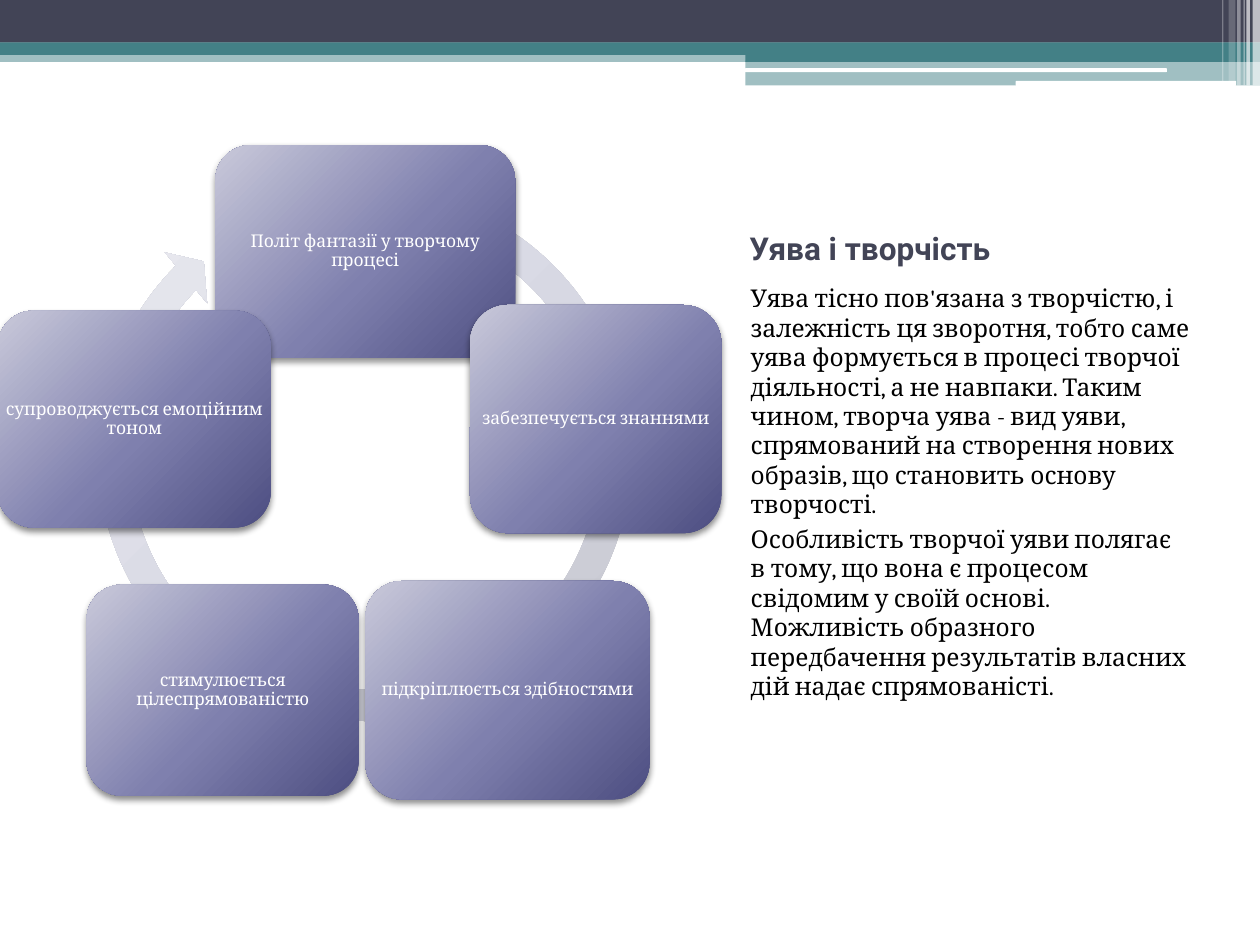
from pptx import Presentation
from pptx.dml.color import RGBColor
from pptx.enum.shapes import MSO_SHAPE
from pptx.enum.text import MSO_ANCHOR, PP_ALIGN
from pptx.oxml import parse_xml
from pptx.oxml.ns import nsdecls
from pptx.util import Pt

WHITE, NAVY, TEAL = "FFFFFF", "424456", "438086"
CARD = ("C9C9DA", "7F80AE", "4D4E81")
RING = ("EBEBF1", "D7D8E3", "C2C3CB")


def tint(hue):
    return RGBColor.from_string(hue)


class Deck:
    """Holds the text style and the current slide."""

    serif, sans = "Cambria", "Roboto"

    def __init__(self, slide):
        self.slide = slide

    def shape(self, kind, box):
        item = self.slide.shapes.add_shape(kind, *map(Pt, box))
        item.shadow.inherit = False
        item.line.fill.background()
        return item

    def band(self, box, hue, alpha=100, kind=MSO_SHAPE.RECTANGLE):
        item = self.shape(kind, box)
        item.fill.solid()
        item.fill.fore_color.rgb = tint(hue)
        if alpha < 100:
            color = item.fill._xPr.find(".//{*}srgbClr")
            color.append(parse_xml(
                f'<a:alpha {nsdecls("a")} val="{alpha * 1000}"/>'))

    def glow(self, kind, box, hues):
        """Add a shape with a round gradient centred beyond its top left."""
        item = self.shape(kind, box)
        item.fill.gradient()
        old = item.fill._xPr.find("{*}gradFill")
        stops = "".join(
            f'<a:gs pos="{pos * 1000}"><a:srgbClr val="{hue}"/></a:gs>'
            for pos, hue in zip((0, 55, 100), hues))
        old.getparent().replace(old, parse_xml(
            f'<a:gradFill {nsdecls("a")} rotWithShape="1">'
            f'<a:gsLst>{stops}</a:gsLst><a:path path="circle">'
            '<a:fillToRect l="-40000" t="-90000" r="140000" b="190000"/>'
            '</a:path></a:gradFill>'))
        return item

    def ring(self, box, turns):
        item = self.glow(MSO_SHAPE.CIRCULAR_ARROW, box, RING)
        for i, turn in enumerate(turns):
            item.adjustments[i] = turn

    def card(self, box, words):
        item = self.glow(MSO_SHAPE.ROUNDED_RECTANGLE, box, CARD)
        item._element.spPr.find("{*}effectLst").append(parse_xml(
            f'<a:outerShdw {nsdecls("a")} blurRad="{Pt(4)}" dist="{Pt(2)}" '
            'dir="5400000" rotWithShape="0"><a:srgbClr val="000000">'
            '<a:alpha val="45000"/></a:srgbClr></a:outerShdw>'))
        self.text(box, [words], 10, WHITE, pad=(3, 3), space=0.9,
                  anchor=MSO_ANCHOR.MIDDLE, align=PP_ALIGN.CENTER)

    def text(self, box, paras, size, hue, font=serif, bold=False,
             pad=(7.2, 3.6), space=1, gap=0,
             anchor=MSO_ANCHOR.TOP, align=PP_ALIGN.LEFT):
        frame = self.slide.shapes.add_textbox(*map(Pt, box)).text_frame
        frame.word_wrap = True
        frame.vertical_anchor = anchor
        frame.margin_left = frame.margin_right = Pt(pad[0])
        frame.margin_top = frame.margin_bottom = Pt(pad[1])
        for i, words in enumerate(paras):
            para = frame.add_paragraph() if i else frame.paragraphs[0]
            para.alignment, para.line_spacing = align, space
            para.space_before = Pt(gap)
            run = para.add_run()
            run.text = words
            run.font.name, run.font.size = font, Pt(size)
            run.font.bold, run.font.color.rgb = bold, tint(hue)


def main():
    show = Presentation()
    show.slide_width, show.slide_height = Pt(720), Pt(540)
    deck = Deck(show.slides.add_slide(show.slide_layouts[6]))

    for box, hue, alpha in (
            ((0, 28.8, 720, 6.6), TEAL, 50),
            ((0, 0, 720, 24.4), NAVY, 100),
            ((0, 24.2, 720, 7.2), TEAL, 100),
            ((426, 28.3, 294, 7.1), TEAL, 100),
            ((426, 34.6, 294, 14.2), TEAL, 50)):
        deck.band(box, hue, alpha)
    for box in ((425.6, 39, 241.2, 2.2), (580.4, 46.2, 126, 2.9)):
        deck.band(box, WHITE, kind=MSO_SHAPE.ROUNDED_RECTANGLE)
    for left, width, high, alpha in (
            (715.8, 4.2, 48.8, 65), (712.2, 2, 48.8, 65),
            (710.6, 0.7, 48.8, 60), (707, 2, 48.8, 40),
            (702, 4, 46.2, 20), (698.4, 0.7, 46.2, 30)):
        deck.band((left, 0, width, high), WHITE, alpha)

    deck.text((421.2, 87.1, 266.4, 69.1), ["Уява і творчість"], 18, NAVY,
              font=deck.sans, bold=True, anchor=MSO_ANCHOR.BOTTOM)
    deck.text((421.9, 158.4, 265.7, 363.6), [
        "Уява тісно пов'язана з творчістю, і залежність ця зворотня, "
        "тобто саме уява формується в процесі творчої діяльності, "
        "а не навпаки. Таким чином, творча уява - вид уяви, спрямований "
        "на створення нових образів, що становить основу творчості.",
        "Особливість творчої уяви полягає в тому, що вона "
        "є процесом свідомим у своїй основі. Можливість образного "
        "передбачення результатів власних дій надає спрямованісті.",
    ], 14, "000000", gap=3)

    deck.ring((46.1, 97.2, 324.7, 324.7),
              (0.055, 3.307, 134.775, 175.704, 0.058))
    for box, words in (
            ((123, 82.9, 171.4, 121.6), "Політ фантазії у творчому процесі"),
            ((268.6, 174.3, 143.6, 130.4), "забезпечується знаннями"),
            ((208.8, 332, 162.4, 124.8), "підкріплюється здібностями"),
            ((49.4, 334.1, 155.6, 120.6), "стимулюється цілеспрямованістю"),
            ((-1.4, 177.5, 156.2, 124), "супроводжується емоційним тоном")):
        deck.card(box, words)

    show.save("out.pptx")


if __name__ == "__main__":
    main()
